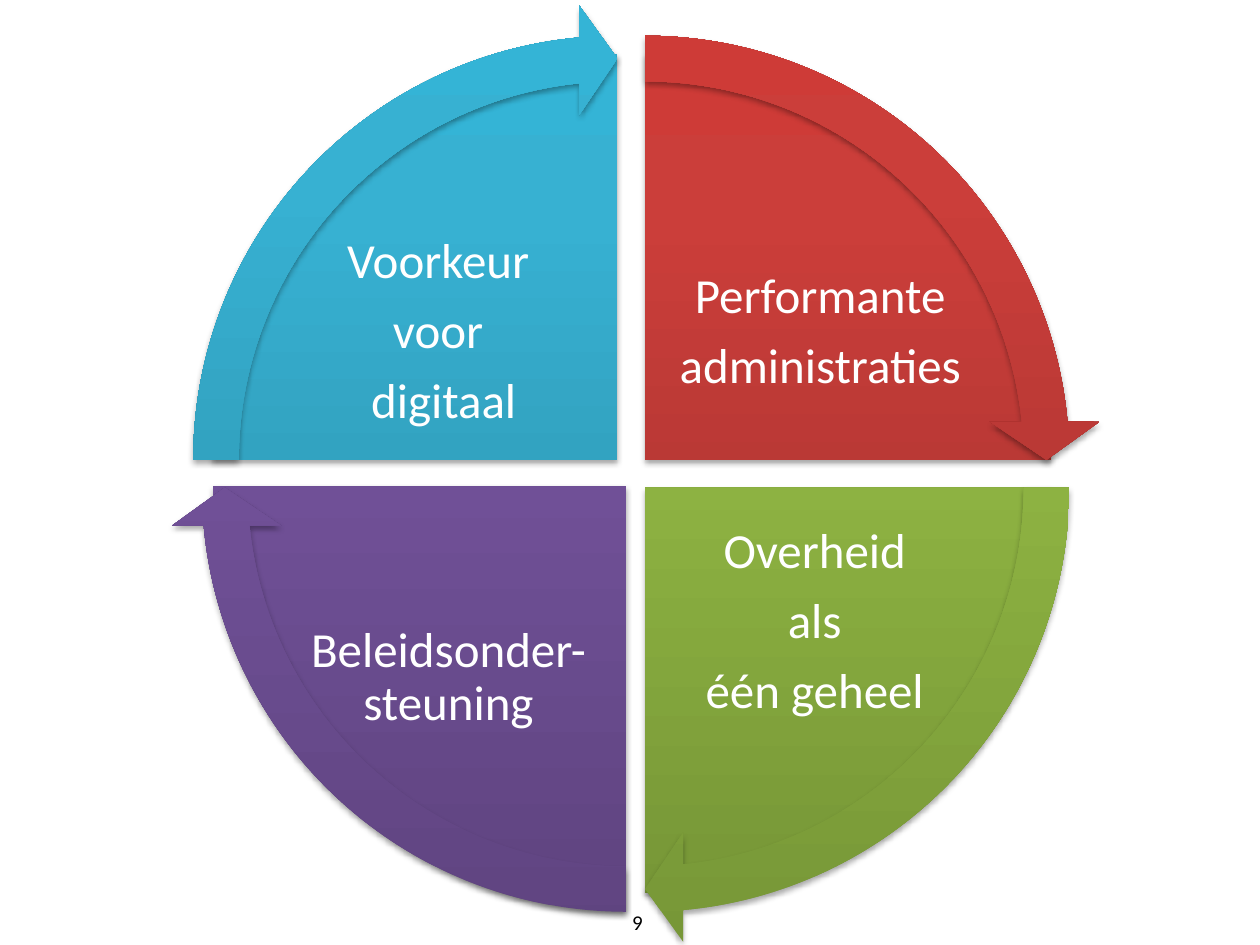
"""Build a slide with a four-quadrant cycle of government goals."""
from pptx import Presentation
from pptx.dml.color import RGBColor
from pptx.enum.shapes import MSO_SHAPE
from pptx.enum.text import MSO_ANCHOR, PP_ALIGN
from pptx.oxml import parse_xml
from pptx.oxml.ns import nsdecls
from pptx.util import Pt

COLORS = {
    "red": ("9C2F2D", "CB3E3A", "CE3B37"),
    "green": ("779737", "9BC348", "9DC746"),
    "purple": ("5F4480", "7B58A6", "7C57A8"),
    "blue": ("2A88A2", "37B1D2", "34B4D6"),
    "label": "FFFFFF",
    "number": "000000",
}
ARROW_SIZE = 521.3
ARROW_SWEEP = 50.725

QUADRANTS = [
    {"color": "red", "start": 162, "end": 0,
     "pie": (136.8, 31, 463.7, 463.7), "arrow": (108, 2.2),
     "label": (383, 126.7, 171.4, 126.7), "anchor": MSO_ANCHOR.MIDDLE,
     "lines": ["Performante", "administraties"]},
    {"color": "green", "start": 0, "end": 54,
     "pie": (136.8, 46.8, 463.7, 463.7), "arrow": (108, 18),
     "label": (383, 287.3, 171.4, 126.7), "anchor": MSO_ANCHOR.BOTTOM,
     "lines": ["Overheid ", "als ", "één geheel "]},
    {"color": "purple", "start": 54, "end": 108,
     "pie": (121.7, 35.3, 472.3, 485.3), "arrow": (97.2, 18),
     "label": (169.2, 287.3, 174.2, 133.2), "anchor": MSO_ANCHOR.BOTTOM,
     "lines": ["Beleidsonder-steuning"]},
    {"color": "blue", "start": 108, "end": 162,
     "pie": (121, 31, 463.7, 463.7), "arrow": (92.2, 2.2),
     "label": (167.8, 126.7, 171.4, 126.7), "anchor": MSO_ANCHOR.MIDDLE,
     "lines": ["Voorkeur ", "voor ", "digitaal"]},
]


def add_glossy_shape(kind, box, adjustments, color):
    shape = slide.shapes.add_shape(kind, *map(Pt, box))
    for index, value in enumerate(adjustments):
        shape.adjustments[index] = value
    stops = "".join(
        f'<a:gs pos="{position}"><a:srgbClr val="{value}"/></a:gs>'
        for position, value in zip((0, 80000, 100000), COLORS[color]))
    properties = shape._element.spPr
    properties.append(parse_xml(
        f'<a:gradFill {nsdecls("a")} rotWithShape="1"><a:gsLst>{stops}</a:gsLst>'
        '<a:lin ang="16200000" scaled="0"/></a:gradFill>'))
    shape.line.fill.background()
    properties.append(parse_xml(
        f'<a:effectLst {nsdecls("a")}>'
        '<a:outerShdw blurRad="40000" dist="23000" dir="5400000" rotWithShape="0">'
        '<a:srgbClr val="000000"><a:alpha val="35000"/></a:srgbClr>'
        '</a:outerShdw></a:effectLst>'))


def add_label(box, lines, anchor, size, color):
    frame = slide.shapes.add_textbox(*map(Pt, box)).text_frame
    frame.word_wrap = True
    frame.vertical_anchor = anchor
    frame.text = "\n".join(lines)
    for paragraph in frame.paragraphs:
        paragraph.alignment = PP_ALIGN.CENTER
        paragraph.font.name = "Calibri"
        paragraph.font.size = Pt(size)
        paragraph.font.color.rgb = RGBColor.from_string(COLORS[color])
    return frame


presentation = Presentation()
presentation.slide_width = Pt(720)
presentation.slide_height = Pt(540)
slide = presentation.slides.add_slide(presentation.slide_layouts[6])

add_label((334.8, 514.1, 59, 25.9), ["9"], MSO_ANCHOR.MIDDLE, 12, "number")

for quadrant in QUADRANTS:
    add_glossy_shape(MSO_SHAPE.PIE, quadrant["pie"],
                     (quadrant["start"], quadrant["end"]), quadrant["color"])
    label = add_label(quadrant["label"], quadrant["lines"], quadrant["anchor"], 28, "label")
    label.margin_left = label.margin_right = Pt(2.8)
    label.margin_top = label.margin_bottom = Pt(2.8)
    for paragraph in label.paragraphs:
        paragraph.line_spacing = 0.9
        paragraph.space_after = Pt(9.8)

for quadrant in QUADRANTS:
    start = quadrant["start"]
    add_glossy_shape(MSO_SHAPE.CIRCULAR_ARROW,
                     (*quadrant["arrow"], ARROW_SIZE, ARROW_SIZE),
                     (0.05, 3.275, start + ARROW_SWEEP, start, 0.06),
                     quadrant["color"])

presentation.save("out.pptx")
